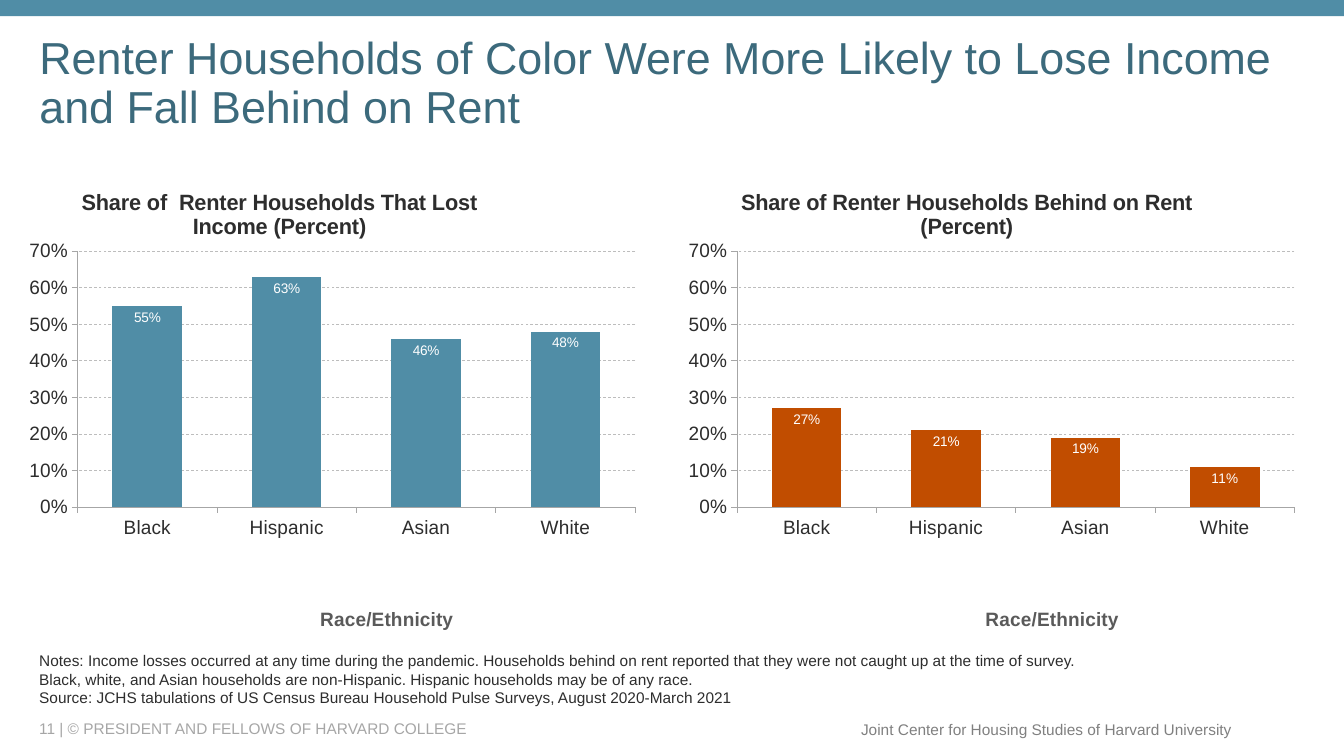
from dataclasses import dataclass

from lxml import etree
from pptx import Presentation
from pptx import util as u
from pptx.chart import data as chart_data
from pptx.dml.color import RGBColor
from pptx.enum import chart as ch
from pptx.enum import dml, shapes, text
from pptx.oxml import ns

FONT = "Arial"
TEAL = RGBColor(0x50, 0x8D, 0xA6)
DARK_TEAL = RGBColor(0x3C, 0x6A, 0x7C)
ORANGE = RGBColor(0xC1, 0x4D, 0x00)
INK = RGBColor(0x2D, 0x2D, 0x2D)
AXIS_TITLE_GRAY = RGBColor(0x5A, 0x5A, 0x5A)
FOOTER_GRAY = RGBColor(0x80, 0x80, 0x80)
LINE_GRAY = RGBColor(0xA6, 0xA6, 0xA6)
GRID_GRAY = RGBColor(0xBD, 0xBD, 0xBD)
WHITE = RGBColor(0xFF, 0xFF, 0xFF)
RACES = ("Black", "Hispanic", "Asian", "White")


@dataclass(frozen=True)
class Panel:
    left: float
    title: str
    values: tuple
    color: RGBColor
    axis_title_x: float


@dataclass(frozen=True)
class Caption:
    frame: tuple
    lines: tuple
    color: RGBColor
    anchor: text.MSO_ANCHOR = text.MSO_ANCHOR.MIDDLE
    align: text.PP_ALIGN = text.PP_ALIGN.LEFT
    wrap: bool = True


PANELS = (
    Panel(0.29, "Share of  Renter Households That Lost Income (Percent)",
          (0.55, 0.63, 0.46, 0.48), TEAL, 0.45),
    Panel(6.83, "Share of Renter Households Behind on Rent (Percent)",
          (0.27, 0.21, 0.19, 0.11), ORANGE, 0.46),
)

CAPTIONS = (
    Caption((0.29, 7.13, 7.92, 0.2),
            ("11 | © PRESIDENT AND FELLOWS OF HARVARD COLLEGE",), LINE_GRAY),
    Caption((8.42, 7.09, 3.9, 0.29),
            ("Joint Center for Housing Studies of Harvard University",),
            FOOTER_GRAY, align=text.PP_ALIGN.RIGHT, wrap=False),
    Caption((0.29, 6.48, 11.75, 0.58),
            ("Notes: Income losses occurred at any time during the pandemic. Households "
             "behind on rent reported that they were not caught up at the time of survey.",
             "Black, white, and Asian households are non-Hispanic. "
             "Hispanic households may be of any race.",
             "Source: JCHS tabulations of US Census Bureau Household Pulse Surveys, "
             "August 2020-March 2021"),
            INK, anchor=text.MSO_ANCHOR.BOTTOM),
)


def style(font, size: float, color: RGBColor, bold: bool = False) -> None:
    font.name = FONT
    font.size = u.Pt(size)
    font.bold = bold
    font.color.rgb = color


def place(parent, index: int, **settings) -> None:
    for old in parent.findall(ns.qn("c:layout")):
        parent.remove(old)
    layout = etree.Element(ns.qn("c:layout"))
    manual = etree.SubElement(layout, ns.qn("c:manualLayout"))
    for name, value in settings.items():
        etree.SubElement(manual, ns.qn(f"c:{name}")).set("val", str(value))
    parent.insert(index, layout)


def set_title(title, words: str, size: float, color: RGBColor, x: float, y: float) -> None:
    title.text_frame.text = words
    style(title.text_frame.paragraphs[0].font, size, color, bold=True)
    place(title.element, 1, xMode="edge", yMode="edge", x=x, y=y)


def add_panel(page, panel: Panel) -> None:
    source = chart_data.CategoryChartData(number_format="0%")
    source.categories = RACES
    source.add_series("Series 1", panel.values)
    chart = page.shapes.add_chart(
        ch.XL_CHART_TYPE.COLUMN_CLUSTERED, u.Inches(panel.left), u.Inches(1.69),
        u.Inches(6.11), u.Inches(4.62), source).chart
    style(chart.font, 10, AXIS_TITLE_GRAY)
    chart.has_legend = False
    set_title(chart.chart_title, panel.title, 16, INK, 0.05, 0.03)

    for axis in (chart.category_axis, chart.value_axis):
        style(axis.tick_labels.font, 14, INK)
        axis.major_tick_mark = ch.XL_TICK_MARK.OUTSIDE
        axis.minor_tick_mark = ch.XL_TICK_MARK.NONE
        axis.format.line.color.rgb = LINE_GRAY
        axis.format.line.width = u.Pt(0.5)
    set_title(chart.category_axis.axis_title, "Race/Ethnicity", 14,
              AXIS_TITLE_GRAY, panel.axis_title_x, 0.94)

    scale = chart.value_axis
    scale.minimum_scale, scale.maximum_scale, scale.major_unit = 0, 0.7, 0.1
    scale.tick_labels.number_format = "0%"
    scale.tick_labels.number_format_is_linked = False
    scale.has_major_gridlines = True
    grid = scale.major_gridlines.format.line
    grid.color.rgb = GRID_GRAY
    grid.width = u.Pt(0.5)
    grid.dash_style = dml.MSO_LINE.DASH

    plot = chart.plots[0]
    plot.gap_width = 100
    plot.vary_by_categories = False
    fill = plot.series[0].format.fill
    fill.solid()
    fill.fore_color.rgb = panel.color
    plot.has_data_labels = True
    labels = plot.data_labels
    labels.show_value = True
    labels.position = ch.XL_LABEL_POSITION.INSIDE_END
    labels.number_format = "0%"
    labels.number_format_is_linked = False
    style(labels.font, 10, WHITE)
    place(chart.element.find(".//" + ns.qn("c:plotArea")), 0, layoutTarget="inner",
          xMode="edge", yMode="edge", x=0.05, y=0.176, w=0.933, h=0.556)


def add_caption(page, caption: Caption) -> None:
    box = page.shapes.add_textbox(*map(u.Inches, caption.frame))
    frame = box.text_frame
    frame.word_wrap = caption.wrap
    frame.vertical_anchor = caption.anchor
    frame.text = "\n".join(caption.lines)
    for para in frame.paragraphs:
        para.alignment = caption.align
        style(para.font, 11, caption.color)


def add_heading(page) -> None:
    title = page.shapes.title
    title.left, title.top, title.width, title.height = map(
        u.Inches, (0.29, 0.62, 12.65, 0.75))
    frame = title.text_frame
    frame.text = "Renter Households of Color Were More Likely to Lose Income and Fall Behind on Rent"
    frame.word_wrap = True
    frame.auto_size = text.MSO_AUTO_SIZE.NONE
    frame.vertical_anchor = text.MSO_ANCHOR.BOTTOM
    para = frame.paragraphs[0]
    para.alignment = text.PP_ALIGN.LEFT
    para.line_spacing = 0.9
    style(para.font, 32, DARK_TEAL)


def main() -> None:
    deck = Presentation()
    deck.slide_width, deck.slide_height = u.Inches(13.33), u.Inches(7.5)
    page = deck.slides.add_slide(deck.slide_layouts.get_by_name("Title Only"))
    band = page.shapes.add_shape(
        shapes.MSO_SHAPE.RECTANGLE, 0, 0, deck.slide_width, u.Inches(0.16))
    band.shadow.inherit = False
    band.fill.solid()
    band.fill.fore_color.rgb = TEAL
    band.line.fill.background()
    add_heading(page)
    for panel in PANELS:
        add_panel(page, panel)
    for caption in CAPTIONS:
        add_caption(page, caption)
    deck.save("out.pptx")


if __name__ == "__main__":
    main()
